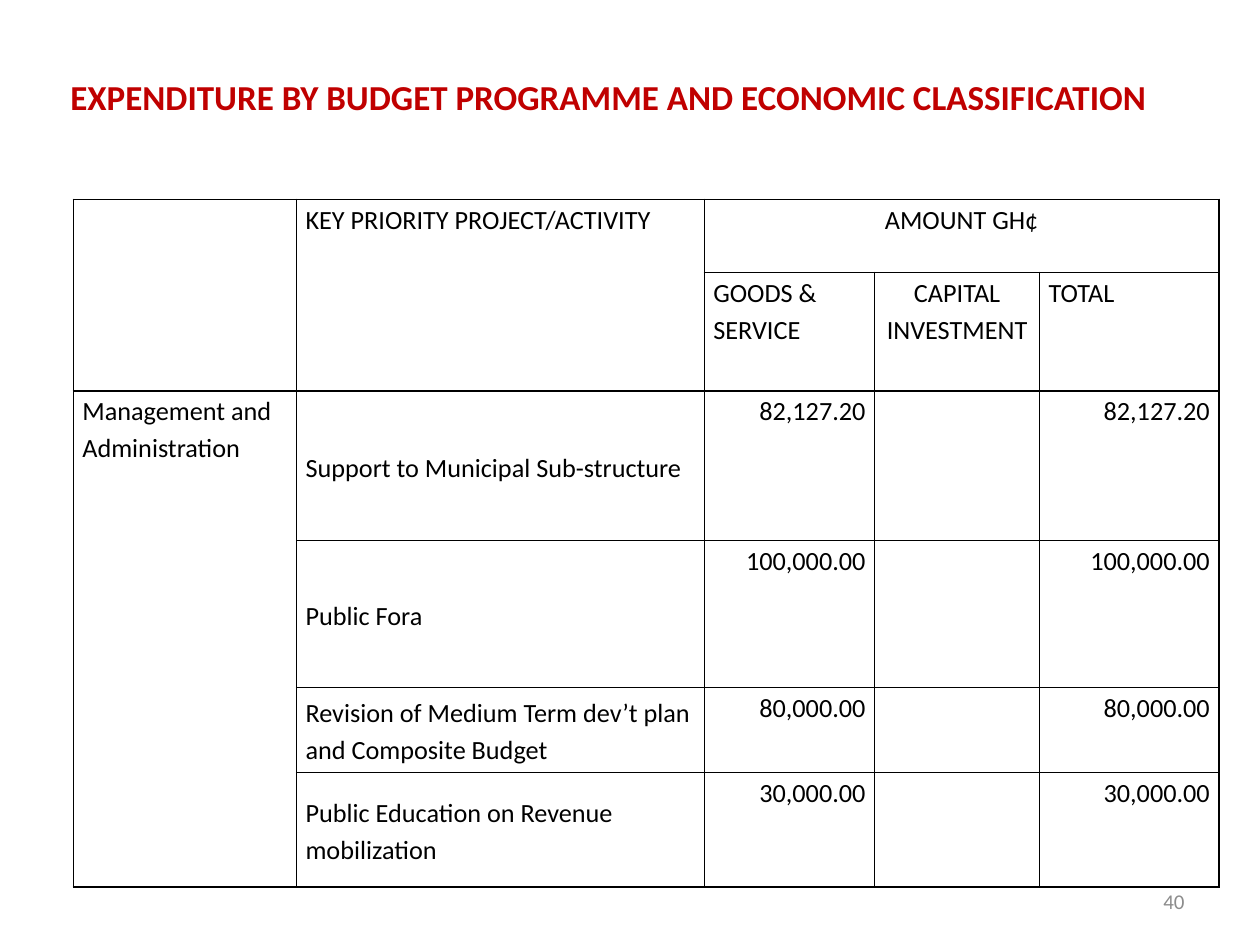
import pptx
import pptx.dml.color
import pptx.enum.text
import pptx.util
import lxml.etree

Cm = pptx.util.Cm
Pt = pptx.util.Pt
ALIGN = pptx.enum.text.PP_ALIGN
ANCHOR = pptx.enum.text.MSO_ANCHOR
SPACE = "http://schemas.openxmlformats.org/drawingml/2006/main"

WIDTHS = [4.5, 8.22, 3.43, 3.33, 3.61]
HEIGHTS = [1.47, 2.39, 3.02, 2.96, 1.71, 2.31]
ITEMS = [
    ("Support to Municipal Sub-structure", "82,127.20"),
    ("Public Fora", "100,000.00"),
    ("Revision of Medium Term dev’t plan and Composite Budget", "80,000.00"),
    ("Public Education on Revenue mobilization", "30,000.00"),
]


def paint(code):
    """Turn a hex string into a colour."""
    return pptx.dml.color.RGBColor.from_string(code)


def style(para, size, code, align, bold=False):
    """Set the font and alignment of a paragraph."""
    para.alignment = align
    para.font.name = "Calibri"
    para.font.size = Pt(size)
    para.font.bold = bold
    para.font.color.rgb = paint(code)


def frame(cell, code="000000"):
    """Draw thin borders round a cell and clear its fill."""
    props = cell._tc.get_or_add_tcPr()
    for side in ("lnL", "lnR", "lnT", "lnB"):
        line = lxml.etree.SubElement(props, f"{{{SPACE}}}{side}", w=str(Pt(1)))
        fill = lxml.etree.SubElement(line, f"{{{SPACE}}}solidFill")
        lxml.etree.SubElement(fill, f"{{{SPACE}}}srgbClr", val=code)
    cell.fill.background()


def write(cell, text, align=ALIGN.LEFT, anchor=ANCHOR.TOP):
    """Put styled text in a table cell."""
    cell.text = text
    cell.vertical_anchor = anchor
    para = cell.text_frame.paragraphs[0]
    para.line_spacing = 1.15
    style(para, 15, "000000", align)


def add_title(slide, left, top, width, height):
    """Place the slide title in its box."""
    title = slide.shapes.title
    title.left, title.top, title.width, title.height = map(
        Cm, (left, top, width, height))
    title.text = "EXPENDITURE BY BUDGET PROGRAMME AND ECONOMIC CLASSIFICATION"
    title.text_frame.vertical_anchor = ANCHOR.MIDDLE
    style(title.text_frame.paragraphs[0], 20, "C00000", ALIGN.CENTER, True)


def add_grid(slide, left, top):
    """Place the budget table with its merged heads and sums."""
    grid = slide.shapes.add_table(
        len(HEIGHTS), len(WIDTHS), Cm(left), Cm(top),
        Cm(sum(WIDTHS)), Cm(sum(HEIGHTS))).table
    grid.first_row = grid.horz_banding = False
    for col, width in zip(grid.columns, WIDTHS):
        col.width = Cm(width)
    for row, height in zip(grid.rows, HEIGHTS):
        row.height = Cm(height)
    for cell in grid.iter_cells():
        cell.margin_left = cell.margin_right = Cm(0.18)
        cell.margin_top = cell.margin_bottom = 0
        frame(cell)
    for start, end in [((0, 0), (1, 0)), ((0, 1), (1, 1)),
                       ((0, 2), (0, 4)), ((2, 0), (5, 0))]:
        grid.cell(*start).merge(grid.cell(*end))
    write(grid.cell(0, 1), "KEY PRIORITY PROJECT/ACTIVITY")
    write(grid.cell(0, 2), "AMOUNT GH¢", ALIGN.CENTER)
    write(grid.cell(1, 2), "GOODS & SERVICE")
    write(grid.cell(1, 3), "CAPITAL INVESTMENT", ALIGN.CENTER)
    write(grid.cell(1, 4), "TOTAL")
    write(grid.cell(2, 0), "Management and Administration")
    for row, (name, sum_text) in enumerate(ITEMS, 2):
        write(grid.cell(row, 1), name, anchor=ANCHOR.MIDDLE)
        for col in (2, 4):
            write(grid.cell(row, col), sum_text, ALIGN.RIGHT)


def add_page(slide, left, top, width, height):
    """Place the page number in its box."""
    box = slide.shapes.add_textbox(*map(Cm, (left, top, width, height)))
    box.text_frame.word_wrap = True
    box.text_frame.vertical_anchor = ANCHOR.MIDDLE
    box.text_frame.text = "40"
    style(box.text_frame.paragraphs[0], 12, "8C8C8C", ALIGN.RIGHT)


def main():
    """Build and save the slide."""
    deck = pptx.Presentation()
    deck.slide_width, deck.slide_height = Cm(25.4), Cm(19.05)
    slide = deck.slides.add_slide(deck.slide_layouts[5])
    add_title(slide, 0.84, 1.27, 22.86, 1.37)
    add_grid(slide, 1.48, 4.02)
    add_page(slide, 18.2, 17.66, 5.93, 1.01)
    deck.save("out.pptx")


if __name__ == "__main__":
    main()
